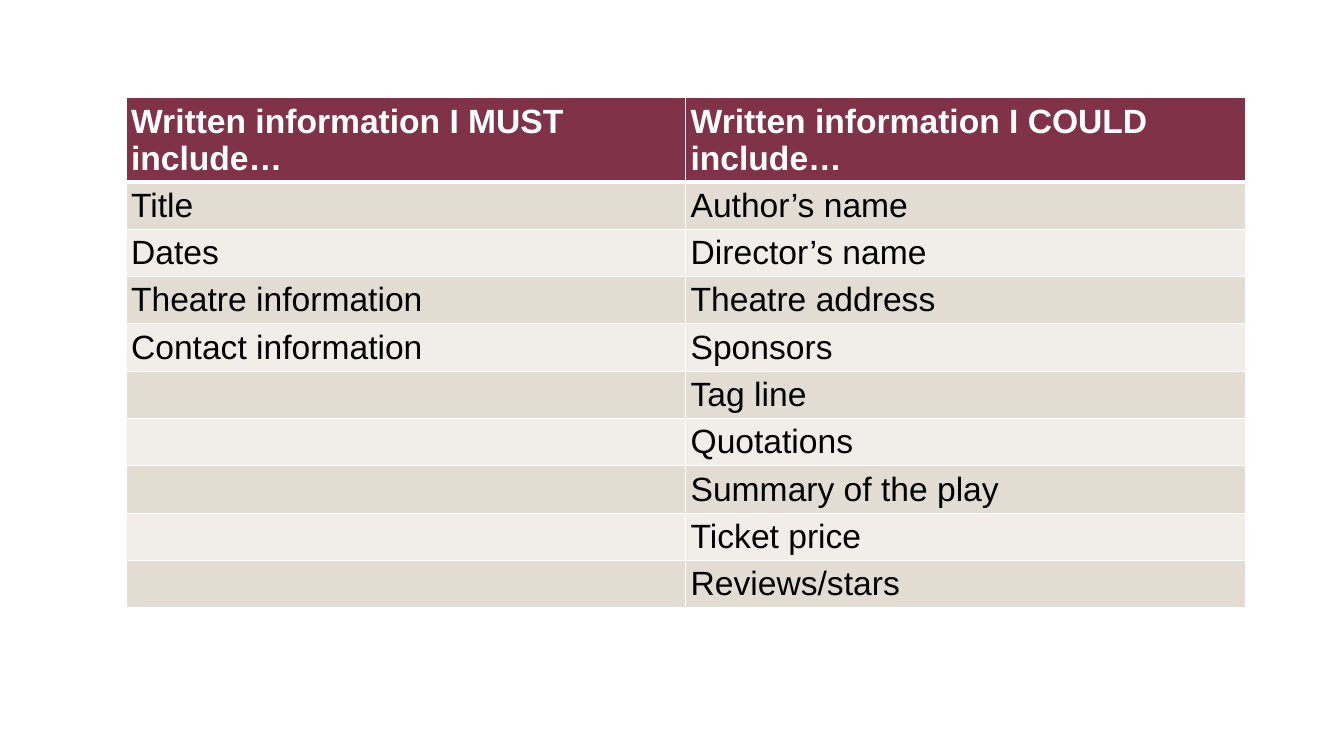
from dataclasses import dataclass
from itertools import zip_longest

from lxml.etree import SubElement
from pptx import Presentation
from pptx.dml.color import RGBColor
from pptx.oxml.ns import qn
from pptx.table import _Cell as Cell
from pptx.util import Inches, Pt

WHITE = RGBColor(0xFF, 0xFF, 0xFF)
BLACK = RGBColor(0x00, 0x00, 0x00)
MAROON = RGBColor(0x80, 0x33, 0x48)
SAND = RGBColor(0xE2, 0xDC, 0xD3)
CREAM = RGBColor(0xF1, 0xEE, 0xEA)

MUST_INCLUDE = ["Title", "Dates", "Theatre information", "Contact information"]
COULD_INCLUDE = [
    "Author’s name", "Director’s name", "Theatre address", "Sponsors", "Tag line",
    "Quotations", "Summary of the play", "Ticket price", "Reviews/stars",
]
HEADINGS = ("Written information I MUST include…", "Written information I COULD include…")


@dataclass(frozen=True)
class RowStyle:
    fill: RGBColor
    color: RGBColor
    bold: bool = False
    top: float = 1
    bottom: float = 1


def add_borders(cell: Cell, style: RowStyle) -> None:
    """Draw the four white edges, widths in points."""
    properties = cell._tc.get_or_add_tcPr()
    edges = {"a:lnL": 1, "a:lnR": 1, "a:lnT": style.top, "a:lnB": style.bottom}
    for tag, width in edges.items():
        edge = SubElement(properties, qn(tag), w=str(Pt(width)))
        edge_fill = SubElement(edge, qn("a:solidFill"))
        SubElement(edge_fill, qn("a:srgbClr"), val=str(WHITE))


def write_cell(cell: Cell, text: str, style: RowStyle) -> None:
    add_borders(cell, style)  # edges come before the fill in the cell's XML
    cell.fill.solid()
    cell.fill.fore_color.rgb = style.fill
    cell.margin_left = cell.margin_right = cell.margin_top = Inches(0.05)
    cell.margin_bottom = Inches(0.04)
    if text:
        run = cell.text_frame.paragraphs[0].add_run()
        run.text = text
        run.font.name = "Arial"
        run.font.size = Pt(24)
        run.font.bold = style.bold
        run.font.color.rgb = style.color


def row_style(index: int) -> RowStyle:
    if index == 0:
        return RowStyle(MAROON, WHITE, bold=True, bottom=3)
    return RowStyle(SAND if index % 2 else CREAM, BLACK, top=3 if index == 1 else 1)


def main() -> None:
    deck = Presentation()
    deck.slide_width, deck.slide_height = Inches(13.33), Inches(7.5)
    slide = deck.slides.add_slide(deck.slide_layouts[6])

    # Checklist table: headings, then the two lists side by side
    rows = [HEADINGS, *zip_longest(MUST_INCLUDE, COULD_INCLUDE, fillvalue="")]
    checklist = slide.shapes.add_table(
        len(rows), len(HEADINGS), Inches(1.25), Inches(0.97), Inches(11.1), Inches(5.06)
    ).table
    for column in checklist.columns:
        column.width = Inches(5.55)
    for index, texts in enumerate(rows):
        checklist.rows[index].height = Inches(0.47 if index else 0.83)
        for cell, text in zip(checklist.rows[index].cells, texts):
            write_cell(cell, text, row_style(index))

    deck.save("out.pptx")


if __name__ == "__main__":
    main()
